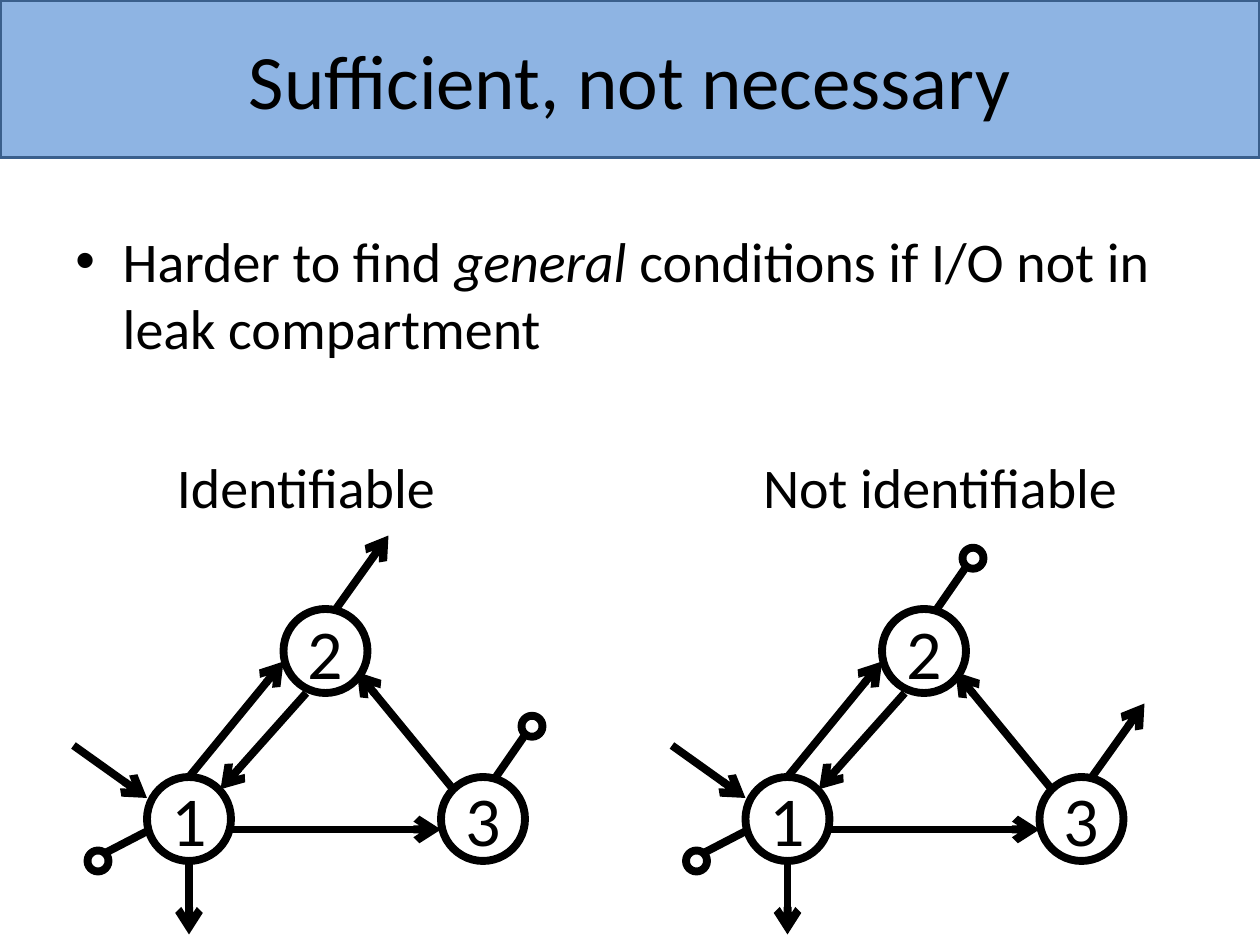
from lxml import etree
from pptx import Presentation
from pptx.dml.color import RGBColor
from pptx.enum import shapes, text
from pptx.oxml import ns
from pptx.util import Pt

BLACK = RGBColor(0x00, 0x00, 0x00)
BAND_BLUE = RGBColor(0x8E, 0xB4, 0xE3)
BAND_EDGE = RGBColor(0x3A, 0x5F, 0x8C)
STROKE = Pt(4.5)
NODE_SIZE, PORT_SIZE = 48, 12


def write(frame, *runs, size=32, align=text.PP_ALIGN.LEFT,
          anchor=text.MSO_ANCHOR.TOP, wrap=True, italic=()):
    frame.word_wrap = wrap
    frame.vertical_anchor = anchor
    paragraph = frame.paragraphs[0]
    paragraph.alignment = align
    for words in runs:
        run = paragraph.add_run()
        run.text = words
        run.font.name = "Calibri"
        run.font.size = Pt(size)
        run.font.color.rgb = BLACK
        run.font.italic = words in italic
    return paragraph


def draw_edge(canvas, start, end, arrow=True):
    edge = canvas.add_connector(shapes.MSO_CONNECTOR.STRAIGHT,
                                *(Pt(value) for value in start + end))
    edge.line.color.rgb = BLACK
    edge.line.width = STROKE
    if arrow:
        etree.SubElement(edge.line._get_or_add_ln(), ns.qn("a:tailEnd"), type="arrow")
    etree.SubElement(edge.element.spPr, ns.qn("a:effectLst"))


deck = Presentation()
deck.slide_width, deck.slide_height = Pt(720), Pt(540)
slide = deck.slides.add_slide(deck.slide_layouts[5])
canvas = slide.shapes

band = canvas.add_shape(shapes.MSO_SHAPE.RECTANGLE, 0, 0, Pt(720), Pt(90))
band.shadow.inherit = False
band.fill.solid()
band.fill.fore_color.rgb = BAND_BLUE
band.line.color.rgb = BAND_EDGE
band.line.width = Pt(2)

title = canvas.title
title.left, title.top, title.width, title.height = Pt(36), 0, Pt(648), Pt(90)
write(title.text_frame, "Sufficient, not necessary", size=44,
      align=text.PP_ALIGN.CENTER, anchor=text.MSO_ANCHOR.MIDDLE)
title.element.addprevious(band.element)

statement = canvas.add_textbox(Pt(36), Pt(126), Pt(672), Pt(90))
point = write(statement.text_frame, "Harder to find ", "general",
              " conditions if I/O not in leak compartment", italic=("general",))
bullet = point._p.get_or_add_pPr()
bullet.set("marL", str(Pt(27)))
bullet.set("indent", str(Pt(-27)))
etree.SubElement(bullet, ns.qn("a:buFont"), typeface="Arial")
etree.SubElement(bullet, ns.qn("a:buChar"), char="•")

compartments = {"1": (84, 444), "2": (162, 348), "3": (252, 444)}
flows = [
    ((108, 444), (162, 378)),
    ((175, 396), (126, 451)),
    ((132, 474), (252, 474)),
    ((259, 451), (204, 384)),
]
input_1 = ((42, 426), (84, 456))
leak_1 = ((108, 492), (108, 534))
leak_2 = ((192, 348), (222, 306))
leak_3 = ((282, 444), (312, 402))
output_1 = ((60, 487.5), (86, 474), (50, 486))
output_2 = ((210, 324), (192, 350), (208, 313))
output_3 = ((300, 420), (282, 446), (298, 409))

models = [
    ("Identifiable", 94, 0, leak_2, output_3),
    ("Not identifiable", 429, 342, leak_3, output_2),
]
for verdict, verdict_left, shift, extra_leak, extra_output in models:
    heading = canvas.add_textbox(Pt(verdict_left), Pt(255), Pt(230), Pt(46))
    write(heading.text_frame, verdict)

    circles = [(x, y, NODE_SIZE, name) for name, (x, y) in compartments.items()]
    for start, end, (x, y) in (output_1, extra_output):
        draw_edge(canvas, (start[0] + shift, start[1]), (end[0] + shift, end[1]), arrow=False)
        circles.append((x, y, PORT_SIZE, ""))

    for x, y, size, name in circles:
        circle = canvas.add_shape(shapes.MSO_SHAPE.OVAL, Pt(x + shift), Pt(y), Pt(size), Pt(size))
        circle.shadow.inherit = False
        circle.fill.background()
        circle.line.color.rgb = BLACK
        circle.line.width = STROKE
        if name:
            write(circle.text_frame, name, size=40, align=text.PP_ALIGN.CENTER,
                  anchor=text.MSO_ANCHOR.MIDDLE, wrap=False)

    for start, end in flows + [input_1, leak_1, extra_leak]:
        draw_edge(canvas, (start[0] + shift, start[1]), (end[0] + shift, end[1]))

deck.save("out.pptx")
